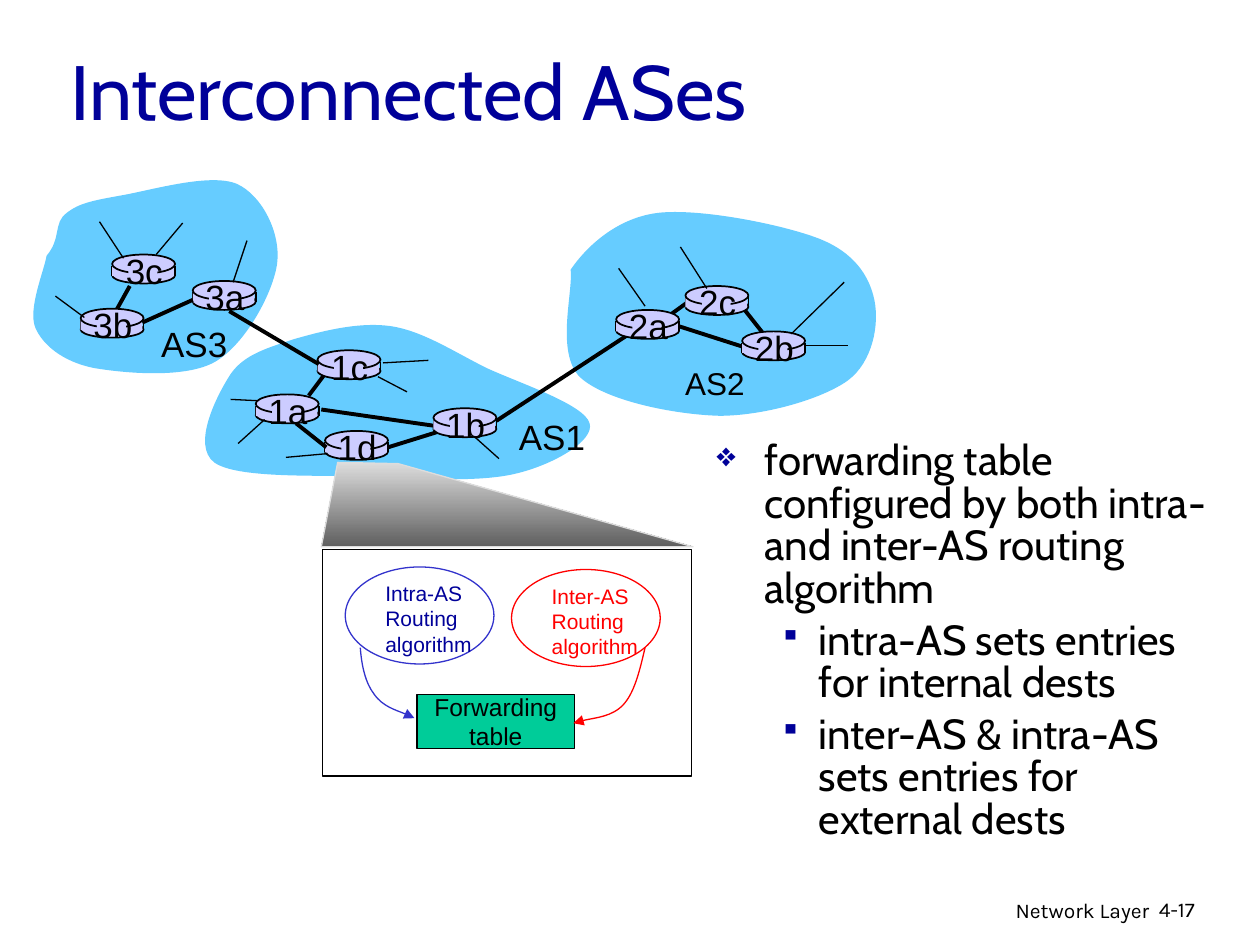
"""Builds the slide on interconnected autonomous systems."""
from lxml.etree import SubElement
from pptx import Presentation
from pptx.dml.color import RGBColor
from pptx.enum.shapes import MSO_CONNECTOR as Connector, MSO_SHAPE as Shape
from pptx.enum.text import MSO_ANCHOR as Anchor, PP_ALIGN as Align
from pptx.oxml.ns import qn
from pptx.util import Inches, Pt

COLORS = {"black": "000000", "navy": "000099", "blue": "3333CC", "red": "FF0000",
          "cloud": "66CCFF", "router": "CCCCFF", "table": "00CC99",
          "silver": "DDDDDD", "gray": "5F5F5F"}

CLOUDS = [
    [(4.53, 2.14), (4.66, 1.95), (4.9, 1.73), (5.22, 1.69), (5.55, 1.65), (6.2, 1.78),
     (6.49, 1.89), (6.78, 2), (6.9, 2.19), (6.94, 2.38), (6.98, 2.57), (6.93, 2.87),
     (6.73, 3.02), (6.52, 3.17), (6.06, 3.3), (5.71, 3.3), (5.35, 3.29), (4.8, 3.18),
     (4.6, 2.99), (4.41, 2.79), (4.55, 2.32), (4.53, 2.14)],
    [(0.37, 2.03), (0.49, 1.89), (0.42, 1.77), (0.53, 1.69), (0.63, 1.61), (0.75, 1.59),
     (0.97, 1.55), (1.2, 1.51), (1.67, 1.37), (1.88, 1.46), (2.08, 1.55), (2.23, 1.85),
     (2.2, 2.09), (2.17, 2.32), (1.95, 2.73), (1.71, 2.87), (1.47, 3.01), (0.97, 2.96),
     (0.74, 2.92), (0.5, 2.87), (0.34, 2.74), (0.28, 2.6), (0.22, 2.45), (0.35, 2.15),
     (0.37, 2.03)],
    [(1.83, 2.97), (1.94, 2.81), (2.13, 2.76), (2.34, 2.69), (2.55, 2.63), (2.85, 2.55),
     (3.11, 2.59), (3.36, 2.63), (3.6, 2.79), (3.86, 2.92), (4.12, 3.04), (4.64, 3.21),
     (4.68, 3.36), (4.72, 3.5), (4.39, 3.69), (4.09, 3.76), (3.8, 3.83), (3.31, 3.8),
     (2.91, 3.78), (2.52, 3.77), (1.88, 3.8), (1.7, 3.67), (1.52, 3.53), (1.72, 3.14),
     (1.83, 2.97)],
]
ROUTERS_BELOW_LINKS = [("3b", 0.64, 2.45), ("1d", 2.58, 3.42), ("3a", 1.53, 2.23),
                       ("1c", 2.52, 2.78), ("3c", 0.89, 2.02)]
ROUTERS_ABOVE_LINKS = [("2a", 4.89, 2.46), ("1a", 2.03, 3.13), ("2c", 5.44, 2.27),
                       ("2b", 5.89, 2.63), ("1b", 3.44, 3.24)]
LINKS = [(5.39, 2.59, 5.89, 2.75), (5.91, 2.46, 6.06, 2.65), (5.29, 2.52, 5.47, 2.39),
         (3.08, 3.55, 3.5, 3.42), (2.35, 3.36, 2.59, 3.55), (2.55, 3.25, 3.45, 3.38),
         (2.45, 3.14, 2.57, 2.98), (1.13, 2.56, 1.53, 2.38), (1.82, 2.47, 2.53, 2.89),
         (3.94, 3.34, 4.98, 2.66), (1.03, 2.27, 0.93, 2.45)]
STUBS = [(0.44, 2.35, 0.67, 2.52), (1.45, 1.77, 1.24, 2.02), (0.79, 1.76, 0.98, 2.05),
         (1.96, 1.91, 1.85, 2.24), (6.38, 2.74, 6.73, 2.74), (6.28, 2.65, 6.7, 2.24),
         (5.61, 2.29, 5.4, 1.96), (5.12, 2.43, 4.91, 2.13), (2.1, 3.33, 1.89, 3.52),
         (2.04, 3.18, 1.83, 3.17), (2.6, 3.6, 2.27, 3.63), (3.04, 2.88, 3.4, 2.86),
         (3.77, 3.47, 3.96, 3.64), (3, 2.99, 3.23, 3.11)]


def color(name):
    return RGBColor.from_string(COLORS[name])


def style(shape, fill=None, line=None, width=0.75):
    shape.shadow.inherit = False
    if fill:
        shape.fill.solid()
        shape.fill.fore_color.rgb = color(fill)
    else:
        shape.fill.background()
    if line:
        shape.line.color.rgb = color(line)
        shape.line.width = Pt(width)
    else:
        shape.line.fill.background()
    return shape


def add_box(slide, kind, box, fill=None, line=None, width=0.75):
    shape = slide.shapes.add_shape(kind, *map(Inches, box))
    return style(shape, fill, line, width)


def write(shape, lines, size, font="Arial", ink="black", align=Align.LEFT, wrap=False,
          anchor=Anchor.TOP):
    frame = shape.text_frame
    frame.word_wrap = wrap
    frame.vertical_anchor = anchor
    for index, line in enumerate(lines):
        paragraph = frame.paragraphs[0] if index == 0 else frame.add_paragraph()
        paragraph.alignment = align
        run = paragraph.add_run()
        run.text = line
        run.font.size = Pt(size)
        run.font.name = font
        run.font.color.rgb = color(ink)
    return frame


def add_text(slide, box, lines, size, **options):
    return write(slide.shapes.add_textbox(*map(Inches, box)), lines, size, **options)


def add_line(slide, ends, width):
    connector = slide.shapes.add_connector(Connector.STRAIGHT, *map(Inches, ends))
    connector.line.color.rgb = color("black")
    connector.line.width = Pt(width)
    SubElement(connector._element.spPr, qn("a:effectLst"))


def add_outline(slide, points, closed=True):
    start, *rest = [(Inches(x), Inches(y)) for x, y in points]
    builder = slide.shapes.build_freeform(*start)
    builder.add_line_segments(rest, close=closed)
    return builder.convert_to_shape()


def add_curve(slide, points, closed=True):
    shape = add_outline(slide, points, closed)
    segments = list(shape._element.iter(qn("a:lnTo")))
    for first in range(0, len(segments), 3):
        curve = segments[first]
        curve.tag = qn("a:cubicBezTo")
        for segment in segments[first + 1:first + 3]:
            curve.append(segment[0])
            segment.getparent().remove(segment)
    return shape


def add_arrow(slide, points, ink):
    shape = style(add_curve(slide, points, closed=False), line=ink)
    SubElement(shape.line._get_or_add_ln(), qn("a:tailEnd"), type="triangle")


def add_router(slide, name, x, y):
    add_box(slide, Shape.OVAL, (x, y + 0.1, 0.5, 0.13), "router", "black", 1)
    for side in (x, x + 0.5):
        add_line(slide, (side, y + 0.09, side, y + 0.17), 1)
    add_box(slide, Shape.RECTANGLE, (x, y + 0.09, 0.49, 0.08), "router")
    add_box(slide, Shape.OVAL, (x, y, 0.5, 0.15), "router", "black", 1)
    add_box(slide, Shape.RECTANGLE, (x + 0.13, y + 0.02, 0.23, 0.2), "router")
    add_text(slide, (x, y - 0.09, 0.51, 0.43), [name], 20, align=Align.CENTER)


def add_funnel(slide):
    funnel = style(add_outline(slide, [(2.55, 4.34), (2.68, 3.67), (3.16, 3.68),
                                       (5.5, 4.34)]), line="silver")
    funnel.fill.gradient()
    funnel.fill.gradient_angle = 270
    for stop, name in zip(funnel.fill.gradient_stops, ("silver", "gray")):
        stop.color.rgb = color(name)


def add_router_detail(slide):
    add_funnel(slide)
    add_box(slide, Shape.RECTANGLE, (2.56, 4.36, 2.93, 1.8), line="black")
    for scope, x, y, line, ink in (("Intra-AS", 2.74, 4.5, "blue", "navy"),
                                   ("Inter-AS", 4.06, 4.52, "red", "red")):
        add_box(slide, Shape.OVAL, (x, y, 1.18, 0.77), line=line)
        add_text(slide, (x + 0.22, y + 0.06, 0.95, 0.7),
                 [scope, "Routing", "algorithm"], 12, ink=ink)
    table = add_box(slide, Shape.RECTANGLE, (3.31, 5.51, 1.25, 0.43), "table", "black")
    write(table, ["Forwarding", "table"], 14, align=Align.CENTER, anchor=Anchor.MIDDLE)
    add_arrow(slide, [(2.86, 5.14), (2.87, 5.28), (2.9, 5.42), (2.97, 5.51),
                      (3.04, 5.61), (3.24, 5.67), (3.29, 5.7)], "blue")
    add_arrow(slide, [(5.12, 5.14), (5.08, 5.31), (5.04, 5.49), (4.95, 5.59),
                      (4.86, 5.69), (4.62, 5.71), (4.55, 5.74)], "red")


def add_bullets(slide):
    frame = add_text(slide, (5.59, 3.45, 4.17, 3.72), [
        "forwarding table configured by both intra- and inter-AS routing algorithm",
        "intra-AS sets entries for internal dests",
        "inter-AS & intra-AS sets entries for external dests"], 24, font="Cabin", wrap=True)
    levels = [(0, 0.38, 0.38, "❖", 80)] + [(1, 0.81, 0.31, "▪", 70)] * 2
    for paragraph, (level, margin, hanging, mark, percent) in zip(frame.paragraphs, levels):
        paragraph.level = level
        paragraph.line_spacing = 0.85
        paragraph.space_before = Pt(4.8)
        properties = paragraph._p.get_or_add_pPr()
        properties.set("marL", str(Inches(margin)))
        properties.set("indent", str(-Inches(hanging)))
        bullet_color = SubElement(properties, qn("a:buClr"))
        SubElement(bullet_color, qn("a:srgbClr"), val=COLORS["navy"])
        SubElement(properties, qn("a:buSzPct"), val=str(percent * 1000))
        SubElement(properties, qn("a:buChar"), char=mark)


def main():
    presentation = Presentation()
    presentation.slide_width, presentation.slide_height = Inches(10), Inches(7.5)
    slide = presentation.slides.add_slide(presentation.slide_layouts[6])
    add_text(slide, (6.05, 7.07, 3.17, 0.31), ["Network Layer"], 12, font="Karla",
             align=Align.RIGHT, wrap=True)
    add_text(slide, (9.1, 7.07, 0.74, 0.3), ["4-17"], 12, font="Karla", wrap=True)
    for points in CLOUDS:
        style(add_curve(slide, points), "cloud")
    for router in ROUTERS_BELOW_LINKS:
        add_router(slide, *router)
    for ends in LINKS:
        add_line(slide, ends, 2.25)
    for router in ROUTERS_ABOVE_LINKS:
        add_router(slide, *router)
    for name, x, y, width, size in (("AS3", 1.18, 2.51, 0.73, 20),
                                    ("AS1", 4.02, 3.25, 0.73, 20),
                                    ("AS2", 5.34, 2.84, 0.67, 18)):
        add_text(slide, (x, y, width, 0.43), [name], size)
    add_router_detail(slide)
    for ends in STUBS:
        add_line(slide, ends, 0.75)
    add_text(slide, (0.46, 0.25, 8.5, 0.92), ["Interconnected ASes"], 44, font="Cabin",
             ink="navy", wrap=True, anchor=Anchor.MIDDLE)
    add_bullets(slide)
    presentation.save("out.pptx")


if __name__ == "__main__":
    main()
